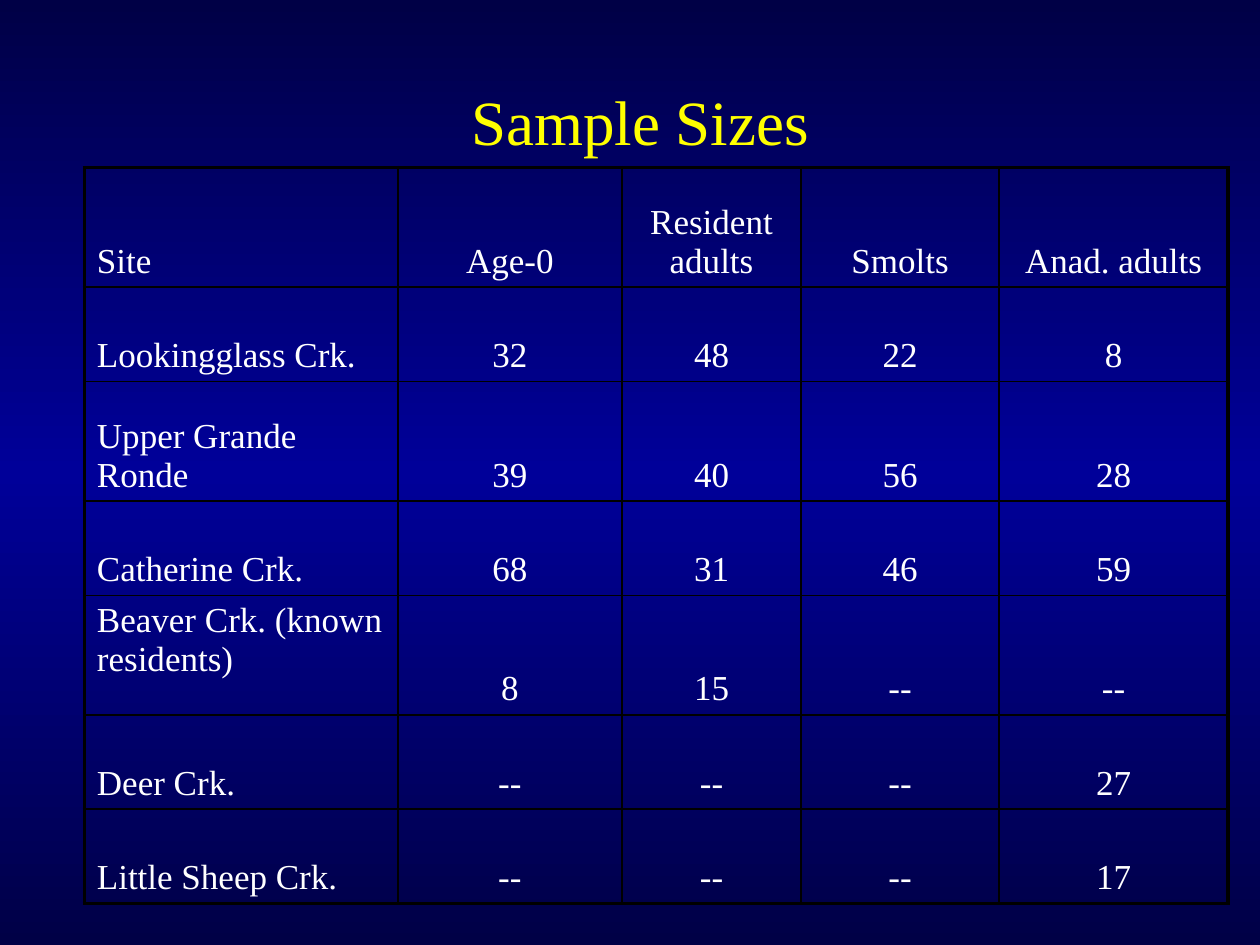
import copy

import pptx
import pptx.dml.color
import pptx.enum.text
import pptx.oxml
import pptx.oxml.ns
import pptx.util

Cm = pptx.util.Cm
Pt = pptx.util.Pt
ALIGN = pptx.enum.text.PP_ALIGN
ANCHOR = pptx.enum.text.MSO_ANCHOR

FONT = "Times New Roman"
TEXT = "FFFFFF"
COLUMN_WIDTHS = [6.32, 4.52, 3.61, 3.99, 4.62]
TALL, SHORT = 2.41, 1.9
ROW_HEIGHTS = [TALL, SHORT, TALL, SHORT, TALL, SHORT, SHORT]
TOP_ANCHORED = "Beaver Crk. (known residents)"
SAMPLES = [
    ["Site", "Age-0", "Resident adults", "Smolts", "Anad. adults"],
    ["Lookingglass Crk.", "32", "48", "22", "8"],
    ["Upper Grande Ronde", "39", "40", "56", "28"],
    ["Catherine Crk.", "68", "31", "46", "59"],
    [TOP_ANCHORED, "8", "15", "--", "--"],
    ["Deer Crk.", "--", "--", "--", "27"],
    ["Little Sheep Crk.", "--", "--", "--", "17"],
]


def rgb(value):
    return pptx.dml.color.RGBColor.from_string(value)


def set_background(s, stops):
    fill = s.background.fill
    fill.gradient()
    fill.gradient_angle = 270
    gs_list = s.element.find(".//" + pptx.oxml.ns.qn("a:gsLst"))
    gs_list.append(copy.deepcopy(gs_list[0]))
    for stop, (position, color) in zip(fill.gradient_stops, stops):
        stop.position = position
        stop.color.rgb = rgb(color)


def write(tf, text, size, color, align):
    p = tf.paragraphs[0]
    p.text = text
    p.alignment = align
    p.font.name = FONT
    p.font.size = Pt(size)
    p.font.color.rgb = rgb(color)


def add_title(s, text):
    sp = s.shapes.add_textbox(Cm(2.11), Cm(0.84), Cm(21.59), Cm(3.18))
    tf = sp.text_frame
    tf.word_wrap = True
    tf.vertical_anchor = ANCHOR.MIDDLE
    write(tf, text, 36, "FFFF00", ALIGN.CENTER)


def set_borders(cell, outer_sides):
    tc_pr = cell._tc.get_or_add_tcPr()
    for i, side in enumerate("LRTB"):
        width = Pt(2.25 if side in outer_sides else 1)
        tc_pr.insert(i, pptx.oxml.parse_xml(
            f'<a:ln{side} {pptx.oxml.ns.nsdecls("a")} w="{width}">'
            '<a:solidFill><a:srgbClr val="000000"/></a:solidFill>'
            f'</a:ln{side}>'))


def add_sample_table(s, rows):
    last_row, last_col = len(rows) - 1, len(rows[0]) - 1
    frame = s.shapes.add_table(
        len(rows), len(rows[0]), Cm(1.7), Cm(3.38),
        Cm(sum(COLUMN_WIDTHS)), Cm(sum(ROW_HEIGHTS)))
    table = frame.table
    table.first_row = False
    table.horz_banding = False
    for column, width in zip(table.columns, COLUMN_WIDTHS):
        column.width = Cm(width)
    for row, height in zip(table.rows, ROW_HEIGHTS):
        row.height = Cm(height)
    for i, values in enumerate(rows):
        for j, text in enumerate(values):
            cell = table.cell(i, j)
            cell.fill.background()
            cell.vertical_anchor = (
                ANCHOR.TOP if text == TOP_ANCHORED else ANCHOR.BOTTOM)
            write(cell.text_frame, text, 20, TEXT,
                  ALIGN.CENTER if j else ALIGN.LEFT)
            edges = {"L": j == 0, "R": j == last_col,
                     "T": i == 0, "B": i == last_row}
            set_borders(cell, [side for side in edges if edges[side]])


def main():
    prs = pptx.Presentation()
    prs.slide_width, prs.slide_height = Cm(25.4), Cm(19.05)
    s = prs.slides.add_slide(prs.slide_layouts[6])
    set_background(s, [(0, "000046"), (0.5, "000099"), (1, "000046")])
    add_title(s, "Sample Sizes")
    add_sample_table(s, SAMPLES)
    prs.save("out.pptx")


if __name__ == "__main__":
    main()
